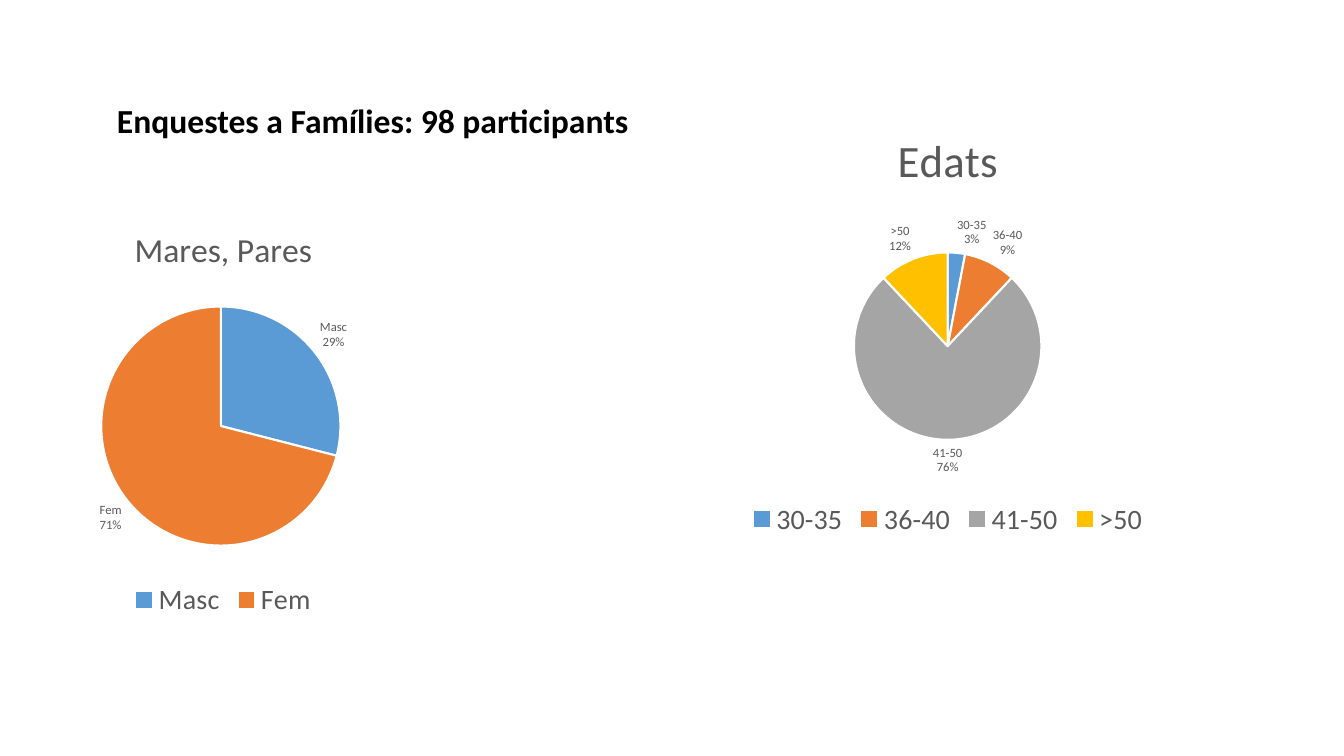
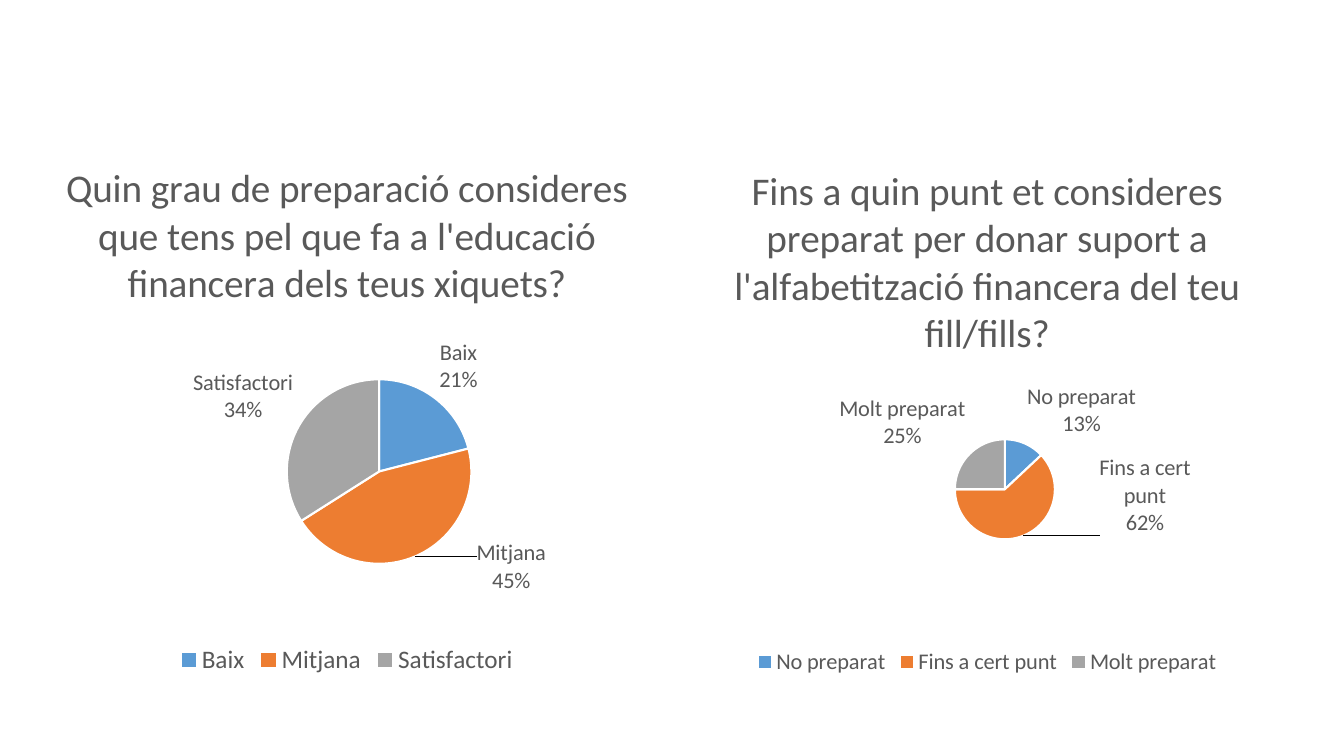
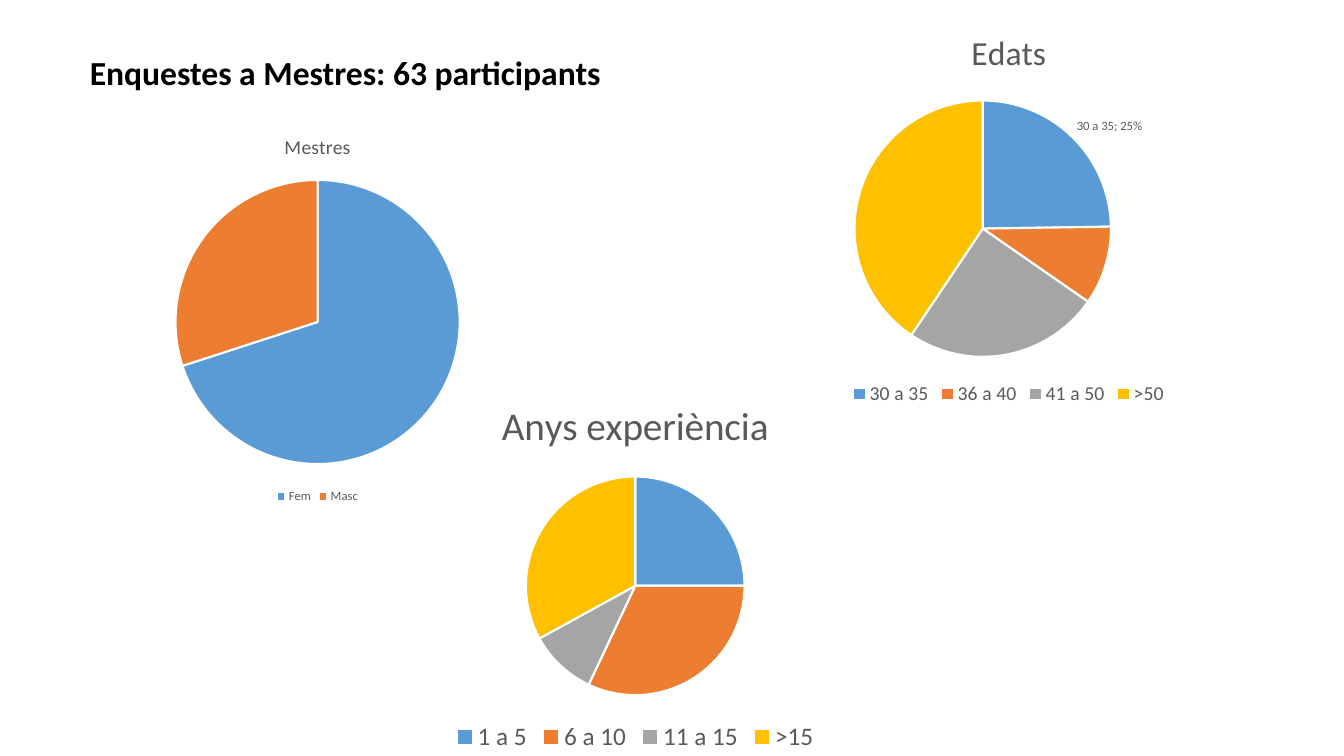
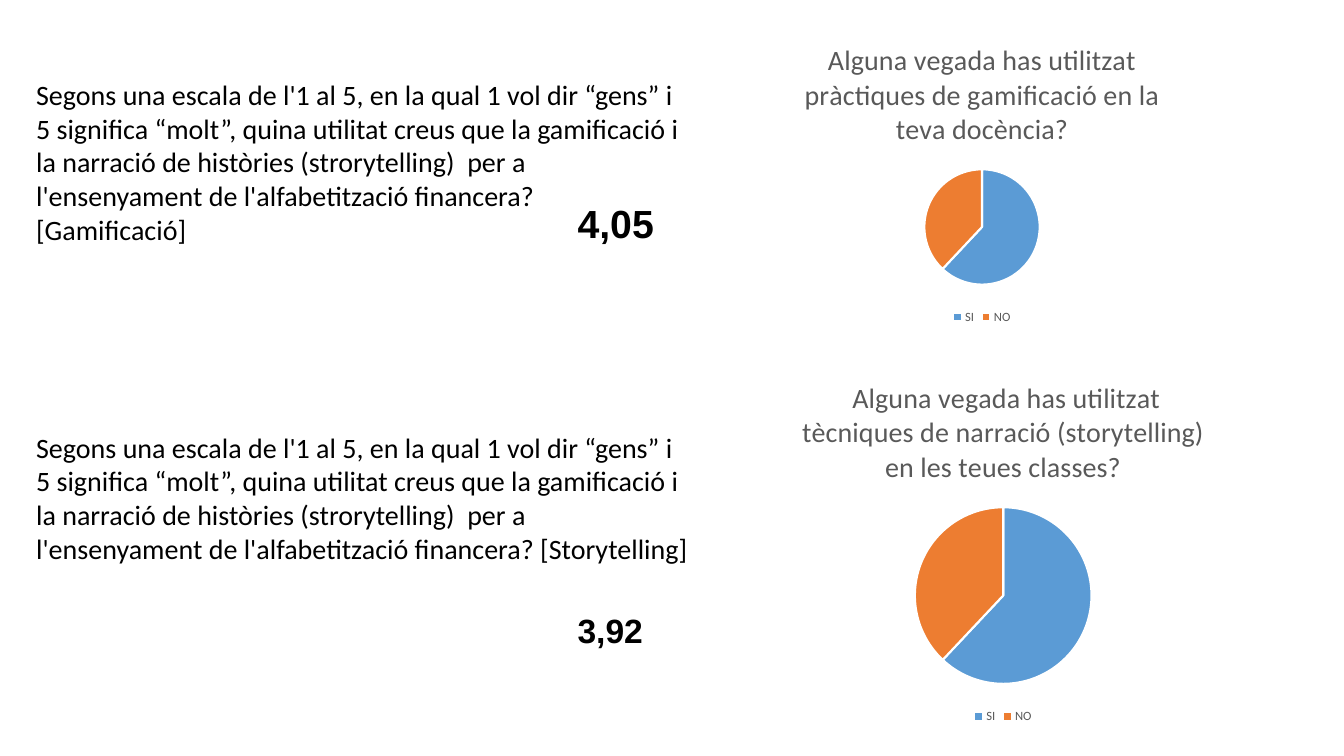
"""Build four slides of survey results from families and teachers."""

from dataclasses import dataclass
from typing import Optional

from pptx import Presentation
from pptx.chart.chart import Chart
from pptx.chart.data import CategoryChartData
from pptx.dml.color import RGBColor
from pptx.enum.chart import XL_CHART_TYPE, XL_LABEL_POSITION, XL_LEGEND_POSITION
from pptx.enum.text import MSO_ANCHOR, MSO_AUTO_SIZE, PP_ALIGN
from pptx.oxml import parse_xml
from pptx.oxml.ns import nsdecls
from pptx.slide import Slide
from pptx.text.text import Font, TextFrame
from pptx.util import Inches, Pt


@dataclass(frozen=True)
class Theme:
    font: str = "Calibri"
    number_font: str = "Arial"
    ink: str = "000000"
    grey: str = "595959"
    white: str = "FFFFFF"
    slices: tuple[str, ...] = ("5B9BD5", "ED7D31", "A5A5A5", "FFC000")
    title_size: float = 24
    body_size: float = 20
    chart_size: float = 10
    small_size: float = 9
    slice_border: float = 1.5


THEME = Theme()
TITLE_ONLY, BLANK = 5, 6
QUESTION = (
    "Segons una escala de l'1 al 5, en la qual 1 vol dir “gens” i 5 significa “molt”, "
    "quina utilitat creus que la gamificació i la narració de històries (strorytelling)  "
    "per a l'ensenyament de l'alfabetització financera? [{}]"
)


@dataclass(frozen=True)
class Box:
    left: float
    top: float
    width: float
    height: float

    def emu(self) -> tuple[int, int, int, int]:
        return Inches(self.left), Inches(self.top), Inches(self.width), Inches(self.height)


@dataclass(frozen=True)
class PointLabel:
    index: int
    separator: str = "\n"
    shift: Optional[tuple[float, float]] = None


@dataclass(frozen=True)
class Pie:
    box: Box
    title: str
    title_size: float
    legend_size: float
    values: dict[str, int]
    label_size: Optional[float] = None
    point_label: Optional[PointLabel] = None


@dataclass(frozen=True)
class Note:
    box: Box
    text: str
    size: float = THEME.body_size
    font: str = THEME.font
    bold: bool = False
    wrap: bool = True


@dataclass(frozen=True)
class Page:
    pies: tuple[Pie, ...]
    title: Optional[Note] = None
    notes: tuple[Note, ...] = ()


def heading(left: float, top: float, text: str) -> Note:
    return Note(Box(left, top, 6.87, 0.5), text, THEME.title_size, bold=True)


def score(box: Box, text: str, size: float, wrap: bool = True) -> Note:
    return Note(box, text, size, THEME.number_font, True, wrap)


PAGES = (
    Page(
        title=heading(1.06, 0.94, "Enquestes a Famílies: 98 participants"),
        pies=(
            Pie(Box(-1.27, 2.06, 6.97, 4.12), "Mares, Pares", 24, 20,
                {"Masc": 29, "Fem": 71}, THEME.small_size),
            Pie(Box(5.95, 1.06, 6.9, 4.32), "Edats", 32, 20,
                {"30-35": 3, "36-40": 9, "41-50": 76, ">50": 12}, THEME.small_size),
        ),
    ),
    Page(
        pies=(
            Pie(Box(-0.18, 1.37, 7.24, 5.38),
                "Quin grau de preparació consideres que tens pel que fa a "
                "l'educació financera dels teus xiquets?",
                28, 18, {"Baix": 21, "Mitjana": 45, "Satisfactori": 34}, 16,
                PointLabel(1, shift=(0.08, -0.04))),
            Pie(Box(6.46, 1.4, 6.66, 5.35),
                "Fins a quin punt et consideres preparat per donar suport a "
                "l'alfabetització financera del teu fill/fills?",
                28, 16, {"No preparat": 13, "Fins a cert punt": 62, "Molt preparat": 25}, 16,
                PointLabel(1, shift=(0.11, -0.16))),
        ),
    ),
    Page(
        title=heading(0.79, 0.46, "Enquestes a Mestres: 63 participants"),
        pies=(
            Pie(Box(0.12, 1.16, 6.06, 3.88), "Mestres", 14, THEME.small_size,
                {"Fem": 70, "Masc": 30}),
            Pie(Box(7.24, 0.1, 5.53, 3.97), "Edats", 24, 14,
                {"30 a 35": 25, "36 a 40": 10, "41 a 50": 25, ">50": 41},
                point_label=PointLabel(0, "; ")),
            Pie(Box(2.59, 3.76, 7.42, 3.75), "Anys experiència", 28, 18,
                {"1 a 5": 25, "6 a 10": 32, "11 a 15": 10, ">15": 33}),
        ),
    ),
    Page(
        notes=(
            Note(Box(0.26, 0.72, 6.67, 1.78), QUESTION.format("Gamificació")),
            score(Box(5.63, 1.93, 1.29, 0.57), "4,05", 28),
            Note(Box(0.26, 4.22, 6.67, 1.78), QUESTION.format("Storytelling")),
            score(Box(5.63, 6, 0.93, 0.5), "3,92", 24, wrap=False),
        ),
        pies=(
            Pie(Box(7.24, 0.23, 5, 3.03),
                "Alguna vegada has utilitzat pràctiques de gamificació en la teva docència?",
                20, THEME.small_size, {"SI": 62, "NO": 38}),
            Pie(Box(7.24, 3.57, 5.42, 3.65),
                " Alguna vegada has utilitzat tècniques de narració (storytelling) "
                "en les teues classes?",
                20, THEME.small_size, {"SI": 62, "NO": 38}),
        ),
    ),
)


def style_font(font: Font, size: float, color: str, name: str = THEME.font,
               bold: bool = False) -> None:
    font.name = name
    font.size = Pt(size)
    font.bold = bold
    font.color.rgb = RGBColor.from_string(color)


def fill_text(tf: TextFrame, note: Note) -> None:
    tf.text = note.text
    tf.word_wrap = note.wrap
    tf.auto_size = MSO_AUTO_SIZE.SHAPE_TO_FIT_TEXT
    tf.vertical_anchor = MSO_ANCHOR.TOP
    p = tf.paragraphs[0]
    p.alignment = PP_ALIGN.LEFT
    style_font(p.font, note.size, THEME.ink, note.font, note.bold)


def add_title(s: Slide, note: Note) -> None:
    sp = s.shapes.title
    sp.left, sp.top, sp.width, sp.height = note.box.emu()
    fill_text(sp.text_frame, note)


def add_note(s: Slide, note: Note) -> None:
    fill_text(s.shapes.add_textbox(*note.box.emu()).text_frame, note)


def add_labels(chart: Chart, pie: Pie) -> None:
    series = chart.plots[0].series[0]
    size = pie.label_size or THEME.small_size
    mark = pie.point_label
    if mark:
        label = series.points[mark.index].data_label
        style_font(label.font, size, THEME.grey)
        label.position = XL_LABEL_POSITION.OUTSIDE_END
    labels = series.data_labels
    labels.show_value = False
    if pie.label_size:
        labels.show_category_name = labels.show_percentage = True
        labels.position = XL_LABEL_POSITION.OUTSIDE_END
        style_font(labels.font, size, THEME.grey)
        add_separator(chart.element.xpath(".//c:ser/c:dLbls")[0], "\n")
    if mark:
        d_lbl = chart.element.xpath(".//c:dLbl")[0]
        for tag, shown in (("showVal", "0"), ("showCatName", "1"), ("showPercent", "1")):
            d_lbl.xpath(f"./c:{tag}")[0].set("val", shown)
        add_separator(d_lbl, mark.separator)
        if mark.shift:
            x, y = mark.shift
            d_lbl.xpath("./c:idx")[0].addnext(parse_xml(
                f'<c:layout {nsdecls("c")}><c:manualLayout>'
                f'<c:x val="{x}"/><c:y val="{y}"/></c:manualLayout></c:layout>'))


def add_separator(labels, text: str) -> None:
    last = labels.xpath("./c:showPercent | ./c:showBubbleSize")[-1]
    last.addnext(parse_xml(f'<c:separator {nsdecls("c")}>{text}</c:separator>'))


def add_pie(s: Slide, pie: Pie) -> None:
    data = CategoryChartData()
    data.categories = list(pie.values)
    data.add_series("Series 1", list(pie.values.values()))
    chart = s.shapes.add_chart(XL_CHART_TYPE.PIE, *pie.box.emu(), data).chart
    style_font(chart.font, THEME.chart_size, THEME.ink)

    chart.has_title = True
    chart.chart_title.include_in_layout = False
    tf = chart.chart_title.text_frame
    tf.text = pie.title
    style_font(tf.paragraphs[0].font, pie.title_size, THEME.grey)

    chart.has_legend = True
    chart.legend.position = XL_LEGEND_POSITION.BOTTOM
    chart.legend.include_in_layout = False
    style_font(chart.legend.font, pie.legend_size, THEME.grey)

    plot = chart.plots[0]
    plot.vary_by_categories = True
    for i, color in enumerate(THEME.slices[:len(pie.values)]):
        fmt = plot.series[0].points[i].format
        fmt.fill.solid()
        fmt.fill.fore_color.rgb = RGBColor.from_string(color)
        fmt.line.color.rgb = RGBColor.from_string(THEME.white)
        fmt.line.width = Pt(THEME.slice_border)
    if pie.label_size or pie.point_label:
        add_labels(chart, pie)


def add_page(prs: Presentation, page: Page) -> None:
    s = prs.slides.add_slide(prs.slide_layouts[TITLE_ONLY if page.title else BLANK])
    for pie in page.pies:
        add_pie(s, pie)
    if page.title:
        add_title(s, page.title)
    for note in page.notes:
        add_note(s, note)


def main() -> None:
    prs = Presentation()
    prs.slide_width, prs.slide_height = Inches(13.33), Inches(7.5)
    for page in PAGES:
        add_page(prs, page)
    prs.save("out.pptx")


if __name__ == "__main__":
    main()
